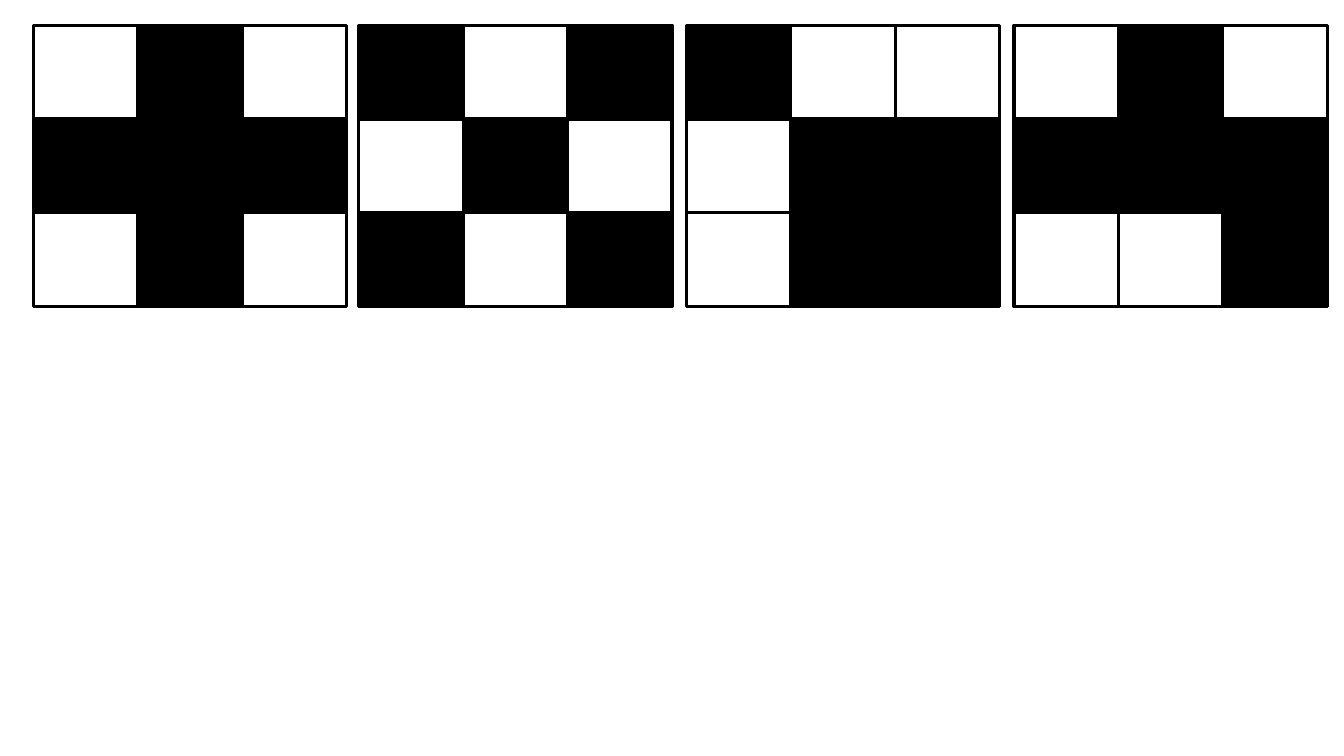
import pptx
import pptx.util
import pptx.dml.color
import pptx.enum.shapes

# Content: left edge of each grid and its rows (# black, . white)
GRIDS = [
    (23.8, [".#.", "###", ".#."]),
    (256.3, ["#.#", ".#.", "#.#"]),
    (490.3, ["#..", ".##", ".##"]),
    (724.3, [".#.", "###", "..#"]),
]
FILLS = {"#": "000000", ".": "FFFFFF"}
EDGE = "000000"
TOP, WIDE, HIGH = 18, 74.6, 67

Pt = pptx.util.Pt
RECT = pptx.enum.shapes.MSO_SHAPE.RECTANGLE


def paint(fill, tint):
    fill.solid()
    fill.fore_color.rgb = pptx.dml.color.RGBColor.from_string(tint)


def add_cell(slide, left, top, tint):
    cell = slide.shapes.add_shape(RECT, Pt(left), Pt(top), Pt(WIDE), Pt(HIGH))
    cell.shadow.inherit = False
    paint(cell.fill, tint)
    paint(cell.line.fill, EDGE)
    cell.line.width = Pt(2.25)


def main():
    # Blank slide
    deck = pptx.Presentation()
    deck.slide_width, deck.slide_height = Pt(960), Pt(540)
    slide = deck.slides.add_slide(deck.slide_layouts[6])

    # Grids of touching cells
    for left, rows in GRIDS:
        for r, row in enumerate(rows):
            for c, mark in enumerate(row):
                add_cell(slide, left + c * WIDE, TOP + r * HIGH, FILLS[mark])

    deck.save("out.pptx")


if __name__ == "__main__":
    main()
